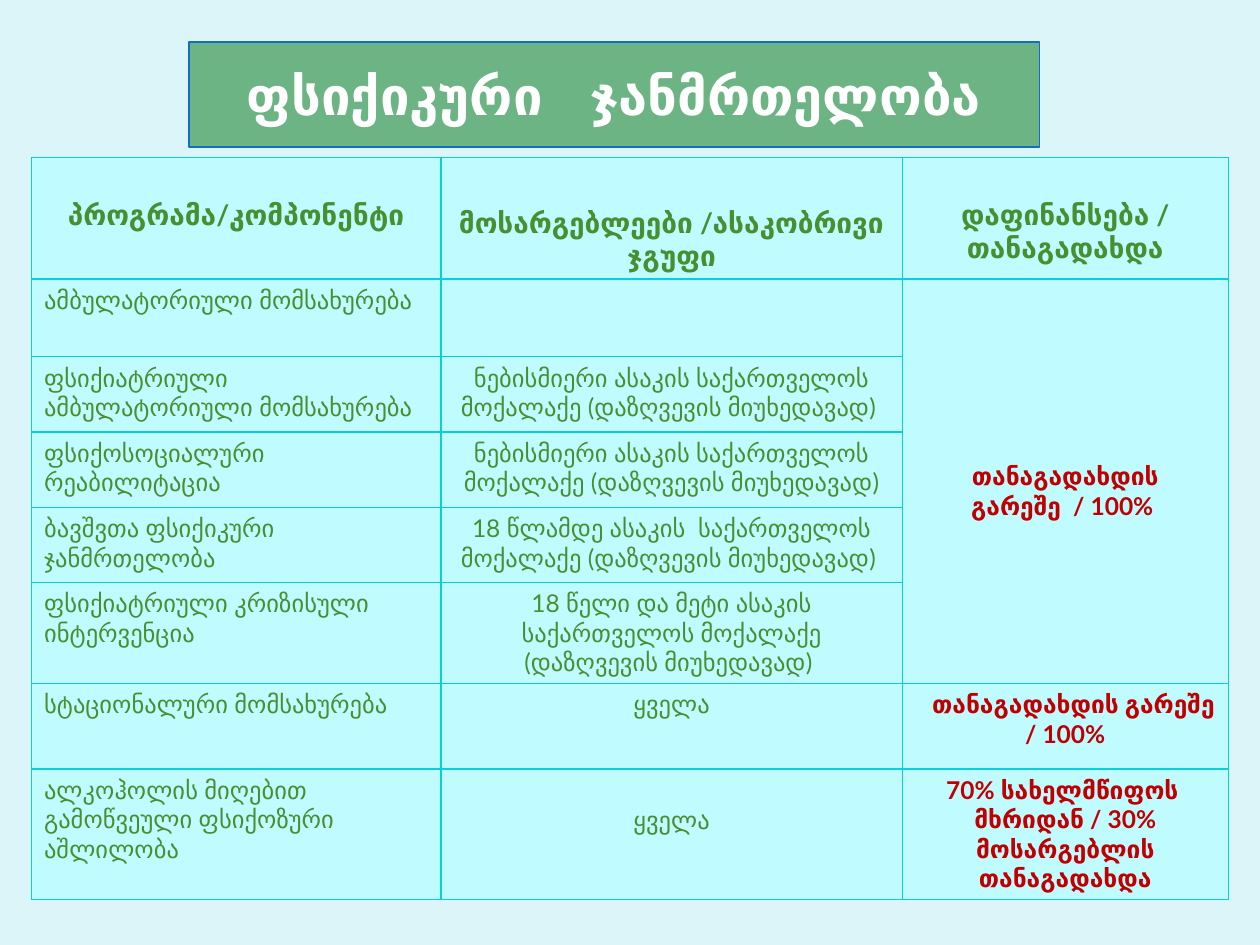
from lxml import etree
from pptx import Presentation
from pptx.dml.color import RGBColor
from pptx.enum.text import MSO_ANCHOR, PP_ALIGN
from pptx.oxml.ns import qn
from pptx.util import Pt

LEFT, CENTER = PP_ALIGN.LEFT, PP_ALIGN.CENTER
TOP, MIDDLE = MSO_ANCHOR.TOP, MSO_ANCHOR.MIDDLE

BACKGROUND = RGBColor(0xDB, 0xF5, 0xF9)
TITLE_FILL = RGBColor(0x6C, 0xB4, 0x84)
TITLE_LINE = RGBColor(0x0F, 0x6F, 0xC6)
CELL_FILL = RGBColor(0xC0, 0xFC, 0xFF)
BORDER = RGBColor(0x06, 0xD0, 0xD9)
GREEN = RGBColor(0x48, 0x8F, 0x30)
RED = RGBColor(0xC0, 0x00, 0x00)
WHITE = RGBColor(0xFF, 0xFF, 0xFF)

COLUMN_WIDTHS = [234, 263.5, 186.5]
ROW_HEIGHTS = [60, 44.5, 43, 43, 43, 43, 49, 60]
CELL_INSET = 3.6

# Each header: text and the space above it
HEADERS = [
    ("პროგრამა/კომპონენტი", 19.5),
    ("მოსარგებლეები /ასაკობრივი ჯგუფი", 24),
    ("დაფინანსება / თანაგადახდა", 19.5),
]
PROGRAMS = [
    "ამბულატორიული მომსახურება",
    "ფსიქიატრიული ამბულატორიული მომსახურება",
    "ფსიქოსოციალური რეაბილიტაცია",
    "ბავშვთა ფსიქიკური ჯანმრთელობა",
    "ფსიქიატრიული კრიზისული ინტერვენცია",
    "სტაციონალური მომსახურება",
    "ალკოჰოლის მიღებით გამოწვეული ფსიქოზური აშლილობა",
]
BENEFICIARIES = [
    "",
    "ნებისმიერი ასაკის საქართველოს მოქალაქე (დაზღვევის მიუხედავად) ",
    "ნებისმიერი ასაკის საქართველოს მოქალაქე (დაზღვევის მიუხედავად)",
    "18 წლამდე ასაკის  საქართველოს მოქალაქე (დაზღვევის მიუხედავად) ",
    "18 წელი და მეტი ასაკის საქართველოს მოქალაქე (დაზღვევის მიუხედავად) ",
    "ყველა",
    "ყველა",
]
FREE_OF_CHARGE = "თანაგადახდის გარეშე  / 100% "
SHARED_COST = "70% სახელმწიფოს  მხრიდან / 30% მოსარგებლის თანაგადახდა"


def write_text(frame, text, *, size=14, color=GREEN, bold=False, font="Lato",
               align=LEFT, indent=0):
    para = frame.paragraphs[0]
    para.alignment = align
    if indent:
        para._p.get_or_add_pPr().set("indent", str(Pt(indent)))
    span = para.add_run()
    span.text = text
    span.font.size = Pt(size)
    span.font.name = font
    span.font.bold = bold
    span.font.color.rgb = color


def add_title(page, text):
    box = page.shapes.title
    box.left, box.top, box.width, box.height = Pt(108), Pt(24), Pt(486), Pt(60)
    box.fill.solid()
    box.fill.fore_color.rgb = TITLE_FILL
    box.line.color.rgb = TITLE_LINE
    box.line.width = Pt(0.75)
    box.text_frame.vertical_anchor = MIDDLE
    write_text(box.text_frame, text, size=30, color=WHITE, bold=True,
               font="Calibri", align=CENTER)


def set_borders(cell):
    properties = cell._tc.get_or_add_tcPr()
    for position, side in enumerate(("a:lnL", "a:lnR", "a:lnT", "a:lnB")):
        line = etree.Element(qn(side), w=str(Pt(0.75)))
        fill = etree.SubElement(line, qn("a:solidFill"))
        etree.SubElement(fill, qn("a:srgbClr"), val=str(BORDER))
        properties.insert(position, line)


def fill_cell(cell, text, *, space_above=0, anchor=TOP, **text_format):
    cell.margin_top = Pt(CELL_INSET + space_above)
    cell.vertical_anchor = anchor
    write_text(cell.text_frame, text, **text_format)


def add_grid(page):
    """Add the empty table with its sizes, fills and borders."""
    table = page.shapes.add_table(
        len(ROW_HEIGHTS), len(COLUMN_WIDTHS), Pt(18), Pt(90),
        Pt(sum(COLUMN_WIDTHS)), Pt(sum(ROW_HEIGHTS))).table
    table.first_row = table.horz_banding = False
    for column, width in zip(table.columns, COLUMN_WIDTHS):
        column.width = Pt(width)
    for row, height in zip(table.rows, ROW_HEIGHTS):
        row.height = Pt(height)
        for cell in row.cells:
            cell.fill.solid()
            cell.fill.fore_color.rgb = CELL_FILL
            set_borders(cell)
    return table


def add_program_table(page):
    table = add_grid(page)
    for column, (text, space_above) in enumerate(HEADERS):
        fill_cell(table.cell(0, column), text, space_above=space_above,
                  size=16, bold=True, align=CENTER)

    last_row = len(PROGRAMS)
    for row, (program, people) in enumerate(zip(PROGRAMS, BENEFICIARIES), 1):
        fill_cell(table.cell(row, 0), program)
        if people:
            fill_cell(table.cell(row, 1), people, align=CENTER,
                      space_above=17 if row == last_row else 0)

    table.cell(1, 2).merge(table.cell(5, 2))
    funding = {"color": RED, "bold": True, "align": CENTER}
    fill_cell(table.cell(1, 2), FREE_OF_CHARGE, anchor=MIDDLE,
              space_above=11.5, **funding)
    fill_cell(table.cell(6, 2), FREE_OF_CHARGE, indent=9.5, **funding)
    fill_cell(table.cell(7, 2), SHARED_COST, **funding)


def main():
    deck = Presentation()
    deck.slide_width, deck.slide_height = Pt(720), Pt(540)
    page = deck.slides.add_slide(deck.slide_layouts[5])
    page.background.fill.solid()
    page.background.fill.fore_color.rgb = BACKGROUND
    add_title(page, "ფსიქიკური    ჯანმრთელობა")
    add_program_table(page)
    deck.save("out.pptx")


if __name__ == "__main__":
    main()
